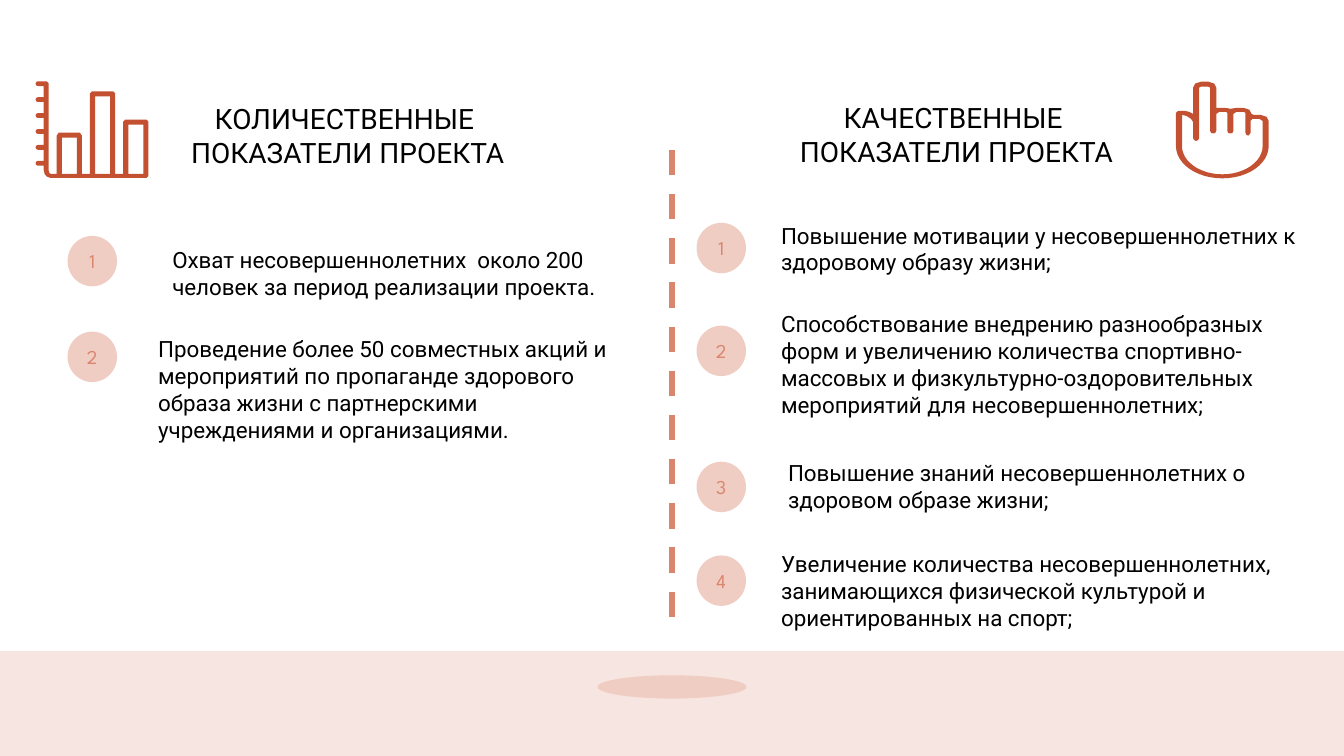
from dataclasses import dataclass
from math import cos, pi, sin

from lxml import etree
from pptx import Presentation
from pptx.dml.color import RGBColor
from pptx.enum.dml import MSO_LINE
from pptx.enum.shapes import MSO_CONNECTOR, MSO_SHAPE
from pptx.enum.text import MSO_ANCHOR, MSO_AUTO_SIZE, PP_ALIGN
from pptx.oxml.ns import qn
from pptx.util import Inches, Pt

RECT, OVAL, STRAIGHT = MSO_SHAPE.RECTANGLE, MSO_SHAPE.OVAL, MSO_CONNECTOR.STRAIGHT
DASH, MIDDLE, GROW = MSO_LINE.DASH, MSO_ANCHOR.MIDDLE, MSO_AUTO_SIZE.SHAPE_TO_FIT_TEXT
LEFT, CENTER = PP_ALIGN.LEFT, PP_ALIGN.CENTER
WIDTH, HEIGHT = Inches(13.333), Inches(7.5)


@dataclass(frozen=True)
class Theme:
    band: str = "F7E5E1"
    badge: str = "F0CDC3"
    accent: str = "DA856D"
    icon: str = "C35131"
    ink: str = "000000"
    body_font: str = "Roboto"
    badge_font: str = "League Spartan"
    heading_size: int = 20
    body_size: int = 16
    badge_size: int = 14
    divider_width: float = 4.5


THEME = Theme()

HEADINGS = [
    (13.43, 12.8, "КОЛИЧЕСТВЕННЫЕ \vПОКАЗАТЕЛИ ПРОЕКТА "),
    (58.73, 12.67, "КАЧЕСТВЕННЫЕ \vПОКАЗАТЕЛИ ПРОЕКТА "),
]

# fmt: (badge top, text left, text top, text width, lines, text)
COLUMNS = {
    5.03: [
        (31.2, 12.08, 31.87, 36.83, 2,
         "Охват несовершеннолетних  около 200 человек за период реализации проекта."),
        (43.87, 11.03, 43.73, 36.83, 4,
         "Проведение более 50 совместных акций и мероприятий по пропаганде здорового "
         "образа жизни с партнерскими учреждениями и организациями."),
    ],
    51.83: [
        (29.47, 57.38, 28.67, 42.3, 2,
         "Повышение мотивации у несовершеннолетних к здоровому образу жизни;"),
        (43.07, 57.38, 40.4, 40.58, 4,
         "Способствование внедрению разнообразных форм и увеличению количества "
         "спортивно-массовых и физкультурно-оздоровительных мероприятий для "
         "несовершеннолетних;"),
        (61.07, 57.9, 60.13, 39, 2,
         "Повышение знаний несовершеннолетних о здоровом образе жизни;"),
        (73.47, 57.38, 72.13, 40.8, 3,
         "Увеличение количества несовершеннолетних, занимающихся физической "
         "культурой и ориентированных на спорт;"),
    ],
}


def across(share):
    return round(WIDTH * share / 100)


def down(share):
    return round(HEIGHT * share / 100)


def area(x, y, w, h):
    return across(x), down(y), across(w), down(h)


def apply(target, values):
    for name, value in values.items():
        setattr(target, name, value)


def paint(sp, color):
    sp.shadow.inherit = False
    sp.fill.solid()
    sp.fill.fore_color.rgb = RGBColor.from_string(color)
    sp.line.fill.background()


def write(tf, text, align, font, size, color):
    p = tf.paragraphs[0]
    p.text = text
    p.alignment = align
    for r in p.runs:
        apply(r.font, {"name": font, "size": Pt(size)})
        r.font.color.rgb = RGBColor.from_string(color)


def add_block(s, kind, box, color):
    sp = s.shapes.add_shape(kind, *area(*box))
    paint(sp, color)
    return sp


def add_badge(s, x, y, number):
    sp = add_block(s, OVAL, (x, y, 3.68, 6.67), THEME.badge)
    sp.text_frame.vertical_anchor = MIDDLE
    write(sp.text_frame, str(number), CENTER, THEME.badge_font, THEME.badge_size, THEME.accent)


def add_text(s, box, text, size, align=LEFT, wrap=True):
    tf = s.shapes.add_textbox(*area(*box)).text_frame
    apply(tf, {"word_wrap": wrap, "auto_size": GROW})
    write(tf, text, align, THEME.body_font, size, THEME.ink)


def add_divider(s, x, top, bottom):
    c = s.shapes.add_connector(STRAIGHT, across(x), down(bottom), across(x), down(top))
    apply(c.line, {"width": Pt(THEME.divider_width), "dash_style": DASH})
    c.line.color.rgb = RGBColor.from_string(THEME.accent)
    etree.SubElement(c._element.spPr, qn("a:effectLst"))


def add_icon(s, x, y, contours):
    fine = [[(10 * px, 10 * py) for px, py in contour] for contour in contours]
    builder = s.shapes.build_freeform(*fine[0][0], scale=Inches(0.001))
    for i, contour in enumerate(fine):
        if i:
            builder.move_to(*contour[0])
        builder.add_line_segments(contour[1:], close=True)
    paint(builder.convert_to_shape(across(x), down(y)), THEME.icon)


def chart_contours():
    outer = [(110, 38), (89, 38), (87, 40), (87, 92), (79, 92), (79, 12), (77, 10),
             (56, 10), (54, 12), (54, 92), (46, 92), (46, 54), (44, 51), (23, 51),
             (21, 54), (21, 92), (16, 92), (14, 91.5), (13, 89), (13, 2), (11, 0)]
    for i in range(6):
        t = 15.8 * i
        outer += [(8, t), (2.4, t), (0.7, t + 0.7), (0, t + 2.4),
                  (0.7, t + 4.1), (2.4, t + 4.8), (8, t + 4.8)]
    outer += [(8, 88), (9, 92), (11, 94.5), (15, 96), (110, 96), (112, 94), (112, 40)]
    bars = [(26, 56), (59, 15), (92, 43)]
    return [outer] + [[(x, y), (x + 15, y), (x + 15, 92), (x, 92)] for x, y in bars]


def palm_arc(rx, ry):
    steps = 24
    return [(46 - rx * cos(pi * i / steps), 64 + ry * sin(pi * i / steps))
            for i in range(steps + 1)]


def hand_contours():
    outer = [(90, 35), (84, 33), (77, 33), (75, 32), (73, 28), (67, 26), (60, 26),
             (54, 27), (49, 26), (40, 26), (40, 6), (38, 2), (32, 0), (25, 0),
             (19, 2), (17, 6), (17, 32), (13, 30), (9, 29), (2, 29), (0, 31)]
    inner = [(6, 33), (10, 34), (12, 35), (15, 37), (17, 40), (17, 56), (18, 58),
             (20, 59), (22, 58), (23, 56), (23, 6), (25, 5), (32, 5), (34, 6),
             (34, 49), (35, 51), (37, 51.5), (39, 51), (40, 49), (40, 32), (43, 30),
             (50, 30), (51, 31), (51, 49), (52, 51), (54, 51.5), (56, 51), (57, 49),
             (57, 32), (60, 30), (67, 30), (69, 31), (69, 51), (70, 53), (72, 53.5),
             (74, 51), (74, 39), (76, 37), (83, 37), (86, 39)]
    return [outer + palm_arc(46, 32) + [(92, 39)], inner + palm_arc(40, 28)[::-1]]


def main():
    prs = Presentation()
    apply(prs, {"slide_width": WIDTH, "slide_height": HEIGHT})
    s = prs.slides.add_slide(prs.slide_layouts[6])
    add_block(s, RECT, (0, 86.13, 100, 13.87), THEME.band)
    add_block(s, OVAL, (44.45, 89.33, 11.1, 3.07), THEME.badge)
    add_divider(s, 50, 17.87, 81.6)
    add_icon(s, 2.65, 10.75, chart_contours())
    add_icon(s, 87.5, 10.8, hand_contours())
    for x, y, text in HEADINGS:
        add_text(s, (x, y, 24.9, 10.27), text, THEME.heading_size, CENTER, False)
    for badge_x, items in COLUMNS.items():
        for number, (badge_y, x, y, w, lines, text) in enumerate(items, 1):
            add_badge(s, badge_x, badge_y, number)
            add_text(s, (x, y, w, 1.33 + 3.6 * lines), text, THEME.body_size)
    prs.save("out.pptx")


if __name__ == "__main__":
    main()
